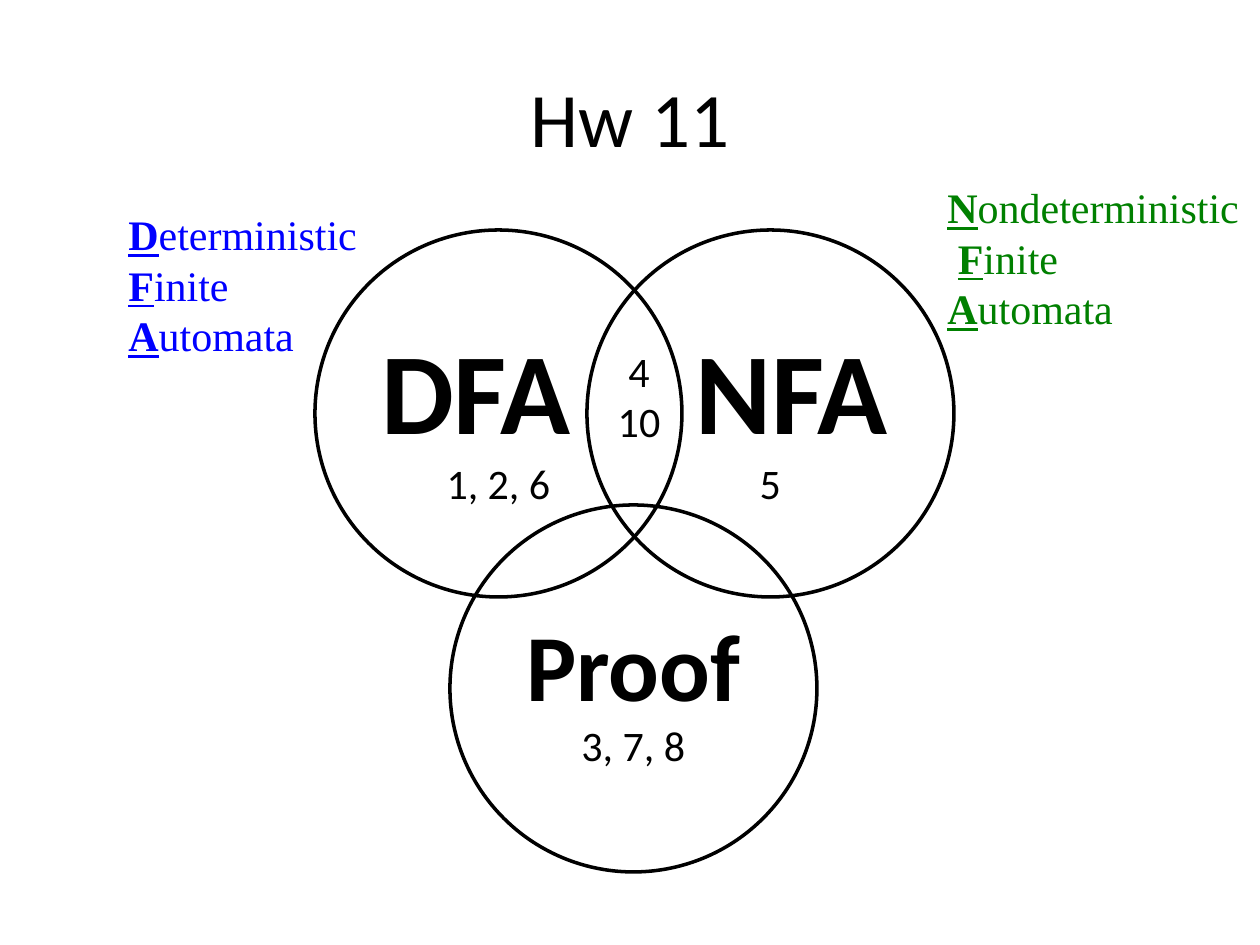
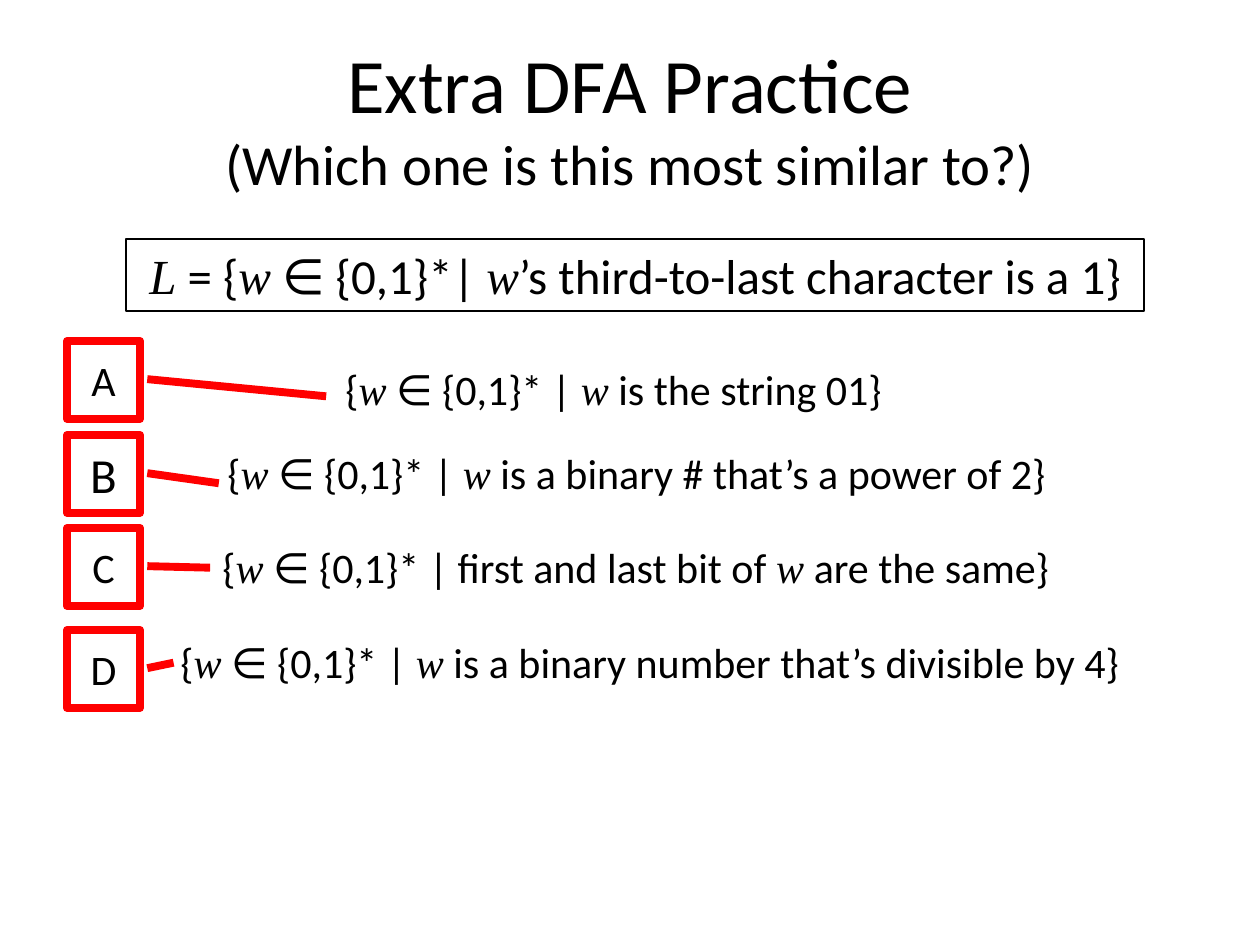
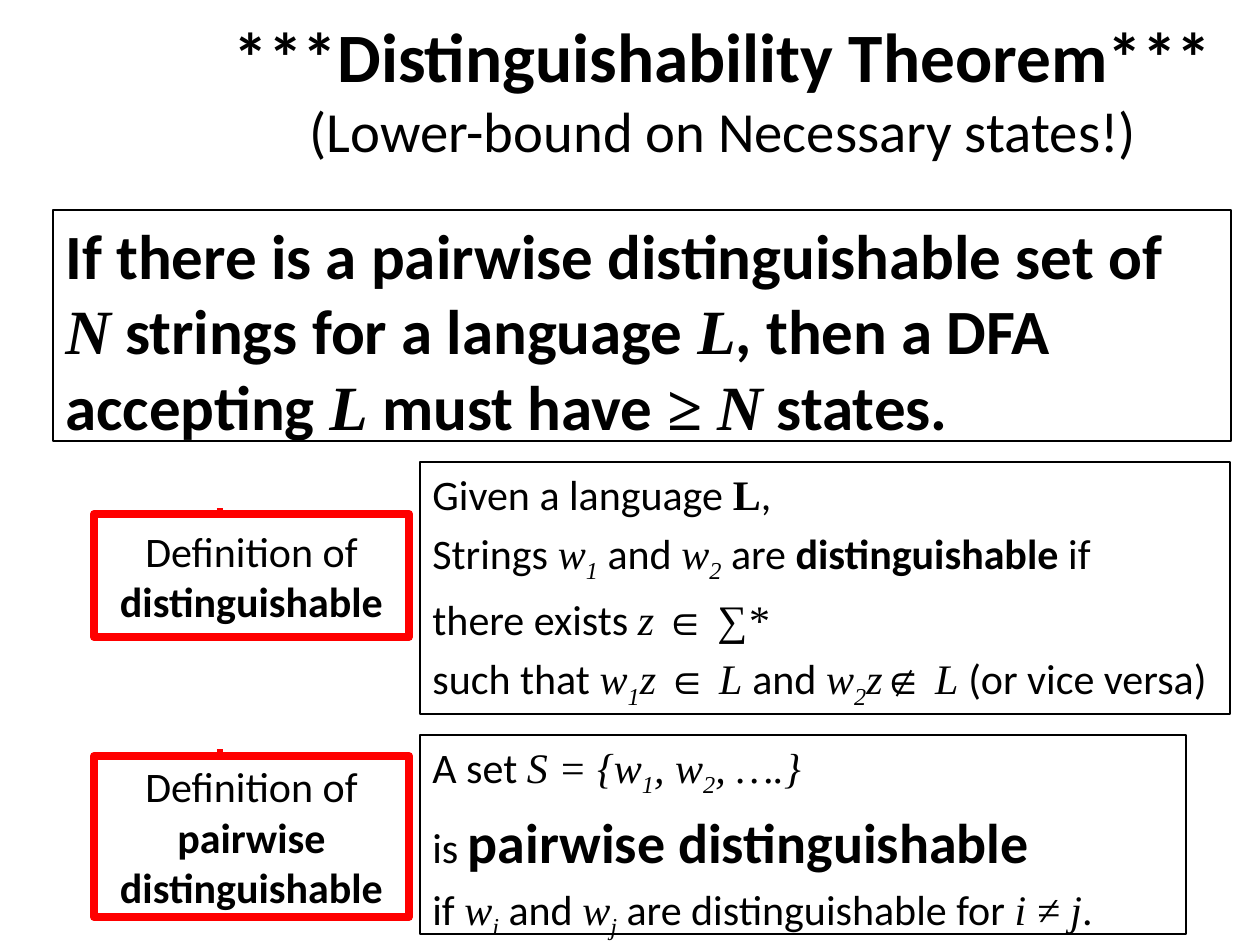
"""Build three automata slides: homework map, DFA practice, distinguishability."""
from pptx import Presentation
from pptx.dml.color import RGBColor
from pptx.enum.shapes import MSO_SHAPE
from pptx.enum.text import MSO_ANCHOR, PP_ALIGN
from pptx.util import Emu, Pt

PX = 914400 / 126
SANS, SERIF = "Calibri", "Times New Roman"
BLACK = RGBColor(0, 0, 0)
WHITE = RGBColor(255, 255, 255)
RED = RGBColor(255, 0, 0)
BLUE = RGBColor(0, 0, 255)
GREEN = RGBColor(0, 128, 0)
LEFT, CENTER, RIGHT = PP_ALIGN.LEFT, PP_ALIGN.CENTER, PP_ALIGN.RIGHT
TOP, MIDDLE = MSO_ANCHOR.TOP, MSO_ANCHOR.MIDDLE

BOLD = {"bold": True}
INITIAL = {"bold": True, "underline": True}
MATH = {"name": SERIF, "italic": True}
MARKS = {"_": MATH, "~": MATH, "^": BOLD, "`": {"name": SERIF, "bold": True}, "@": INITIAL}


def px(*lengths):
    """Turn pixels into EMU."""
    return [Emu(round(n * PX)) for n in lengths]


def set_format(target, values):
    """Set each attribute named in a dict."""
    for name, value in values.items():
        setattr(target, name, value)


def add_run(p, text, font, color, subscript):
    """Add one formatted run."""
    r = p.add_run()
    r.text = text
    set_format(r.font, font)
    r.font.color.rgb = color
    if subscript:
        r.font._element.set("baseline", "-25000")


def add_markup(p, markup, font, color):
    """Add runs, switching format at each mark and breaking at newlines."""
    active, text = [], ""
    for char in markup + "\0":
        if char not in MARKS and char not in "\n\0":
            text += char
            continue
        if text:
            style = dict(font)
            for mark in active:
                style.update(MARKS[mark])
            add_run(p, text, style, color, "~" in active)
            text = ""
        if char == "\n":
            p.add_line_break()
        elif char in active:
            active.remove(char)
        elif char in MARKS:
            active.append(char)


def write(sp, paragraphs, size=24, align=CENTER, anchor=MIDDLE, color=BLACK,
          font=None, before=0, wrap=True):
    """Fill a shape with paragraphs, each a string or (markup, font) parts."""
    tf = sp.text_frame
    set_format(tf, {"word_wrap": wrap, "vertical_anchor": anchor})
    base = {"name": SANS, "size": Pt(size), **(font or {})}
    for i, parts in enumerate(paragraphs):
        p = tf.paragraphs[0] if i == 0 else tf.add_paragraph()
        set_format(p, {"alignment": align, "space_before": Pt(before)})
        for markup, extra in [(parts, {})] if isinstance(parts, str) else parts:
            add_markup(p, markup, {**base, **extra}, color)


def add_text(slide, box, paragraphs, **style):
    """Add a text box."""
    write(slide.shapes.add_textbox(*px(*box)), paragraphs, **style)


def add_title(slide, parts, box=(63, 38, 1134, 157)):
    """Add a centred title made of (markup, font) parts."""
    add_text(slide, box, [parts])


def add_outline(slide, kind, box, line, width, fill=None):
    """Add an outlined preset shape."""
    sp = slide.shapes.add_shape(kind, *px(*box))
    sp.shadow.inherit = False
    if fill is None:
        sp.fill.background()
    else:
        sp.fill.solid()
        sp.fill.fore_color.rgb = fill
    sp.line.color.rgb = line
    sp.line.width = Pt(width)
    return sp


def add_circle(slide, x, y, name, size, align, numbers):
    """Add one circle of the Venn diagram."""
    sp = add_outline(slide, MSO_SHAPE.OVAL, (x, y, 367, 367), BLACK, 2)
    write(sp, [[(name, {"size": Pt(size), "bold": True})]], align=align)
    p = sp.text_frame.add_paragraph()
    p.alignment = CENTER
    add_markup(p, numbers, {"name": SANS, "size": Pt(24)}, BLACK)


def add_panel(slide, box, paragraphs, **style):
    """Add a thinly framed text panel."""
    sp = add_outline(slide, MSO_SHAPE.RECTANGLE, box, BLACK, 0.75)
    write(sp, paragraphs, **{"align": LEFT, "anchor": TOP, **style})


def add_callout(slide, box, label, adjustments, size=24):
    """Add a red callout whose pointer follows the adjustments."""
    sp = add_outline(slide, MSO_SHAPE.LINE_CALLOUT_1, box, RED, 4.5, WHITE)
    for i, value in enumerate(adjustments):
        sp.adjustments[i] = value
    write(sp, [label], size=size)


def homework_slide(slide):
    """Sort the homework questions in a Venn diagram."""
    add_circle(slide, 450, 505, "Proof", 54, CENTER, "3, 7, 8")
    add_circle(slide, 315, 230, "DFA", 66, LEFT, "1, 2, 6")
    add_circle(slide, 587, 230, "NFA", 66, RIGHT, "5")
    add_text(slide, (605, 339, 68, 115), ["4\n10"], anchor=TOP, wrap=False)
    serif = {"align": LEFT, "font": {"name": SERIF}}
    add_text(slide, (116, 202, 271, 165),
             ["@D@eterministic", "@F@inite", "@A@utomata"], color=BLUE, **serif)
    add_text(slide, (935, 175, 325, 165),
             ["@N@ondeterministic", " @F@inite", "@A@utomata"], color=GREEN, **serif)
    add_title(slide, [("Hw 11", {"size": Pt(44)})])


def practice_slide(slide):
    """Ask which language is most similar to L."""
    add_title(slide, [("Extra DFA Practice\n", {"size": Pt(44)}),
                      ("(Which one is this most similar to?)", {"size": Pt(32.4)})])
    add_panel(slide, (126, 239, 1018, 72),
              ["_L_ = {_w_ ∈ {0,1}*| _w_’s third-to-last character is a 1}"],
              size=28, align=CENTER)
    choices = [
        ("A", 24, 341, (0.71, 3.55), 333, 357, "_w_ is the string 01"),
        ("B", 28, 435, (0.62, 2.08), 215, 441, "_w_ is a binary # that’s a power of 2"),
        ("C", 24, 528, (0.51, 1.96), 210, 535, "first and last bit of _w_ are the same"),
        ("D", 24, 630, (0.42, 1.46), 168, 630, "_w_ is a binary number that’s divisible by 4"),
    ]
    for letter, size, y, pointer, text_x, text_y, rule in choices:
        add_text(slide, (text_x, text_y, 1008, 64), [f"{{_w_ ∈ {{0,1}}* | {rule}}}"],
                 align=LEFT, anchor=TOP)
        add_callout(slide, (67, y, 73, 78), letter, (*pointer, 0.49, 1.1), size)


def theorem_slide(slide):
    """State the theorem and its two definitions."""
    add_title(slide, [("***Distinguishability Theorem***\n", {"size": Pt(39.6), **BOLD}),
                      ("(Lower-bound on Necessary states!)", {"size": Pt(32.4)})],
              (103, 10, 1240, 157))
    add_panel(slide, (420, 462, 810, 252), [
        "Given a language `L`,",
        "Strings _w~1~_ and _w~2~_ are ^distinguishable^ if",
        "there exists _z ∈ ∑*_",
        "such that _w~1~z ∈ L _and _w~2~z∉ L _(or vice versa)"], before=5)
    add_panel(slide, (420, 735, 766, 199), [
        "A set _S = {w~1~, w~2~, ….}_",
        [("is ", {}), ("pairwise distinguishable", {"size": Pt(32), **BOLD})],
        "if _w~i~_ and _w~j~_ are distinguishable for _i ≠ j_."], before=5)
    add_panel(slide, (53, 210, 1178, 231), [
        "If there is a pairwise distinguishable set of _N_ strings for a language _L_, "
        "then a DFA accepting _L_ must have _≥ N_ states."],
        size=36, font=BOLD, before=7)
    for y, height, term in [(514, 123, "distinguishable"),
                            (756, 161, "pairwise distinguishable")]:
        add_callout(slide, (94, y, 315, height), f"Definition of ^{term}^",
                    (-0.02, 0.39, -0.02, 0.41))


def main():
    """Build and save the deck."""
    prs = Presentation()
    prs.slide_width, prs.slide_height = px(1260, 945)
    for build in (homework_slide, practice_slide, theorem_slide):
        build(prs.slides.add_slide(prs.slide_layouts[6]))
    prs.save("out.pptx")


if __name__ == "__main__":
    main()
